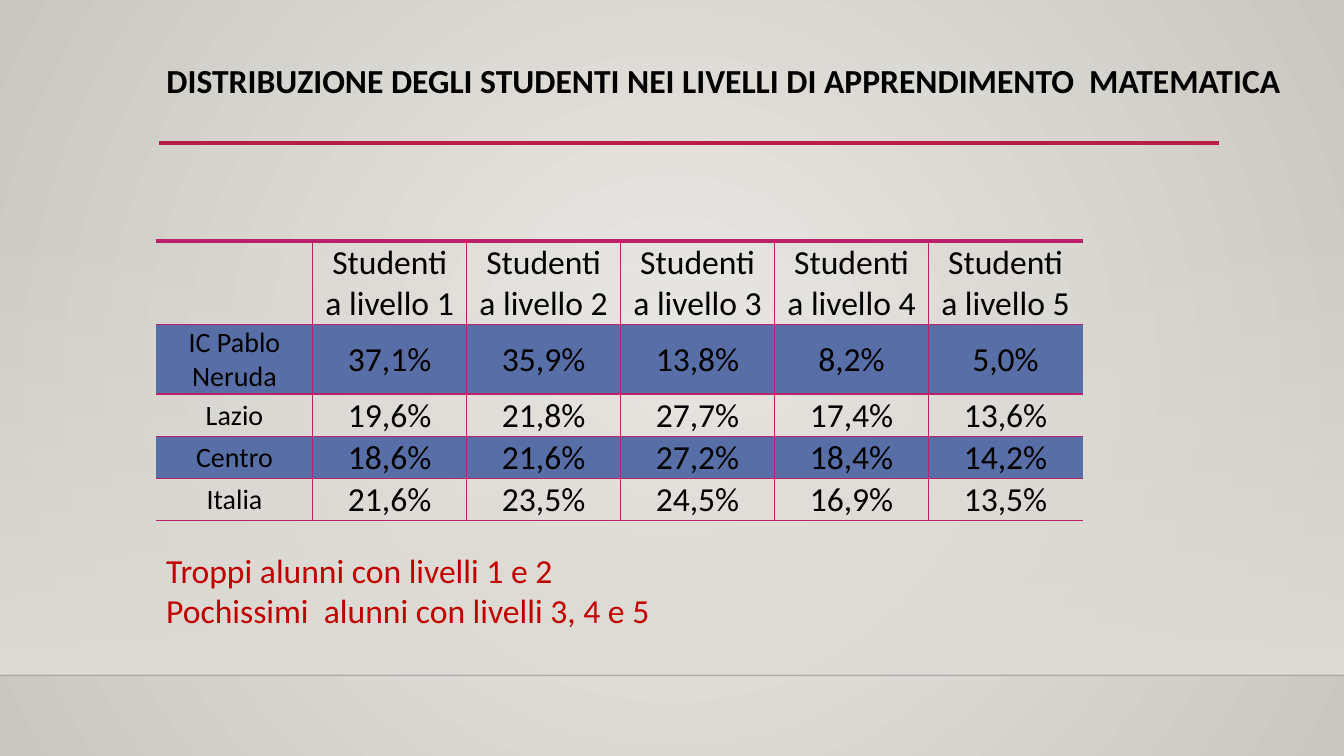
from dataclasses import dataclass

from lxml.etree import SubElement
from pptx import Presentation
from pptx.dml.color import RGBColor
from pptx.enum.shapes import MSO_CONNECTOR, MSO_SHAPE
from pptx.enum.text import MSO_ANCHOR, MSO_AUTO_SIZE, PP_ALIGN
from pptx.oxml import parse_xml
from pptx.oxml.ns import nsdecls, qn
from pptx.util import Cm, Pt


@dataclass(frozen=True)
class Theme:
    font: str = "Calibri"
    text_size: int = 24
    label_size: int = 20
    ink: str = "000000"
    note: str = "C00000"
    rule: str = "B71E42"
    border: str = "BA2169"
    band: str = "586EA6"
    glow: str = "ECEAE7"
    edge: str = "CAC7C1"
    floor: str = "DFDBD5"
    floor_line: str = "000001"


PAGE_WIDTH, PAGE_HEIGHT = 33.87, 19.05
LEFT = 3.94
FLOOR_TOP, FLOOR_BOTTOM = 5.61, 17.02
LABEL_WIDTH, VALUE_WIDTH = 3.94, 3.88
HEADER_HEIGHT, ROW_HEIGHT = 1.52, 0.94

HEADINGS = [""] + [f"Studenti\na livello {level}" for level in range(1, 6)]
RESULTS = [
    ["IC Pablo Neruda", "37,1%", "35,9%", "13,8%", "8,2%", "5,0%"],
    ["Lazio", "19,6%", "21,8%", "27,7%", "17,4%", "13,6%"],
    ["Centro", "18,6%", "21,6%", "27,2%", "18,4%", "14,2%"],
    ["Italia", "21,6%", "23,5%", "24,5%", "16,9%", "13,5%"],
]


def gradient(start, end, direction, start_alpha=100):
    return parse_xml(
        f'<a:gradFill {nsdecls("a")} rotWithShape="1"><a:gsLst>'
        f'<a:gs pos="0"><a:srgbClr val="{start}"><a:alpha val="{start_alpha * 1000}"/></a:srgbClr></a:gs>'
        f'<a:gs pos="100000"><a:srgbClr val="{end}"/></a:gs>'
        f"</a:gsLst>{direction}</a:gradFill>"
    )


class SlideBuilder:
    def __init__(self, deck, theme):
        self.theme = theme
        self.page = deck.slides.add_slide(deck.slide_layouts[5])

    def add_spans(self, para, text, size, color, bold=False):
        """Add text to a paragraph, breaking the line at each newline."""
        for number, line in enumerate(text.split("\n")):
            if number:
                para.add_line_break()
            span = para.add_run()
            span.text = line
            span.font.name = self.theme.font
            span.font.size = Pt(size)
            span.font.bold = bold
            span.font.color.rgb = RGBColor.from_string(color)

    def background(self):
        fill = self.page.background.fill
        fill.solid()
        center = ('<a:path path="circle"><a:fillToRect l="50000" t="50000" '
                  'r="50000" b="50000"/></a:path>')
        solid = next(self.page._element.iter(qn("a:solidFill")))
        solid.getparent().replace(solid, gradient(self.theme.glow, self.theme.edge, center))

    def fading_panel(self, left, top, width, height, color):
        panel = self.page.shapes.add_shape(
            MSO_SHAPE.RECTANGLE, Cm(left), Cm(top), Cm(width), Cm(height))
        panel.shadow.inherit = False
        panel.line.fill.background()
        panel.fill.solid()
        properties = panel._element.spPr
        properties.replace(properties.find(qn("a:solidFill")),
                           gradient(color, color, '<a:lin ang="5400000" scaled="0"/>', 0))

    def horizontal_line(self, left, right, y, color, weight, opacity=100):
        line = self.page.shapes.add_connector(
            MSO_CONNECTOR.STRAIGHT, Cm(left), Cm(y), Cm(right), Cm(y))
        line.line.color.rgb = RGBColor.from_string(color)
        line.line.width = Pt(weight)
        properties = line._element.spPr
        if opacity < 100:
            tint = next(properties.iter(qn("a:srgbClr")))
            SubElement(tint, qn("a:alpha"), val=str(opacity * 1000))
        SubElement(properties, qn("a:effectLst"))

    def title(self, text, left, top, width, height):
        box = self.page.shapes.title
        box.left, box.top, box.width, box.height = Cm(left), Cm(top), Cm(width), Cm(height)
        frame = box.text_frame
        frame.word_wrap = True
        frame.auto_size = MSO_AUTO_SIZE.NONE
        frame.vertical_anchor = MSO_ANCHOR.MIDDLE
        para = frame.paragraphs[0]
        para.alignment = PP_ALIGN.LEFT
        para.line_spacing = 0.9
        self.add_spans(para, text, self.theme.text_size, self.theme.ink, bold=True)

    def text(self, lines, left, top, width, height, color):
        box = self.page.shapes.add_textbox(Cm(left), Cm(top), Cm(width), Cm(height))
        frame = box.text_frame
        frame.word_wrap = True
        frame.auto_size = MSO_AUTO_SIZE.SHAPE_TO_FIT_TEXT
        for number, line in enumerate(lines):
            para = frame.add_paragraph() if number else frame.paragraphs[0]
            self.add_spans(para, line, self.theme.text_size, color)

    def cell_borders(self, cell, weights):
        """Draw the left, right, top and bottom borders; weight 0 hides one."""
        properties = cell._tc.get_or_add_tcPr()
        for side, weight in zip("LRTB", weights):
            line = SubElement(properties, qn(f"a:ln{side}"), w=str(Pt(weight)))
            if weight:
                fill = SubElement(line, qn("a:solidFill"))
                SubElement(fill, qn("a:srgbClr"), val=self.theme.border)
            else:
                SubElement(line, qn("a:noFill"))

    def table(self, rows, left, top):
        last = len(rows[0]) - 1
        width = LABEL_WIDTH + last * VALUE_WIDTH
        height = HEADER_HEIGHT + (len(rows) - 1) * ROW_HEIGHT
        table = self.page.shapes.add_table(
            len(rows), last + 1, Cm(left), Cm(top), Cm(width), Cm(height)).table
        for c, column in enumerate(table.columns):
            column.width = Cm(VALUE_WIDTH if c else LABEL_WIDTH)
        for r, row in enumerate(table.rows):
            row.height = Cm(ROW_HEIGHT if r else HEADER_HEIGHT)
            for c, cell in enumerate(row.cells):
                cell.margin_left = cell.margin_right = cell.margin_top = Cm(0.03)
                cell.margin_bottom = 0
                cell.vertical_anchor = MSO_ANCHOR.MIDDLE
                self.cell_borders(cell, (int(c > 0), int(c < last), 1 if r else 3, 1))
                if r % 2:
                    cell.fill.solid()
                    cell.fill.fore_color.rgb = RGBColor.from_string(self.theme.band)
                else:
                    cell.fill.background()
                if rows[r][c]:
                    para = cell.text_frame.paragraphs[0]
                    para.alignment = PP_ALIGN.CENTER
                    size = self.theme.text_size if c else self.theme.label_size
                    self.add_spans(para, rows[r][c], size, self.theme.ink)


def main():
    deck = Presentation()
    deck.slide_width, deck.slide_height = Cm(PAGE_WIDTH), Cm(PAGE_HEIGHT)
    theme = Theme()
    slide = SlideBuilder(deck, theme)
    slide.background()
    slide.fading_panel(0, FLOOR_TOP, PAGE_WIDTH, FLOOR_BOTTOM - FLOOR_TOP, theme.floor)
    slide.horizontal_line(0, PAGE_WIDTH, FLOOR_BOTTOM, theme.floor_line, 1, opacity=20)
    slide.horizontal_line(4.02, 30.71, 3.6, theme.rule, 2.5)
    slide.title("DISTRIBUZIONE DEGLI STUDENTI NEI LIVELLI DI APPRENDIMENTO  MATEMATICA",
                LEFT, 1.5, 31.14, 1.17)
    slide.table([HEADINGS] + RESULTS, LEFT, 6.07)
    slide.text(["Troppi alunni con livelli 1 e 2", "Pochissimi  alunni con livelli 3, 4 e 5"],
               LEFT, 13.72, 23.29, 2.31, theme.note)
    deck.save("out.pptx")


if __name__ == "__main__":
    main()
